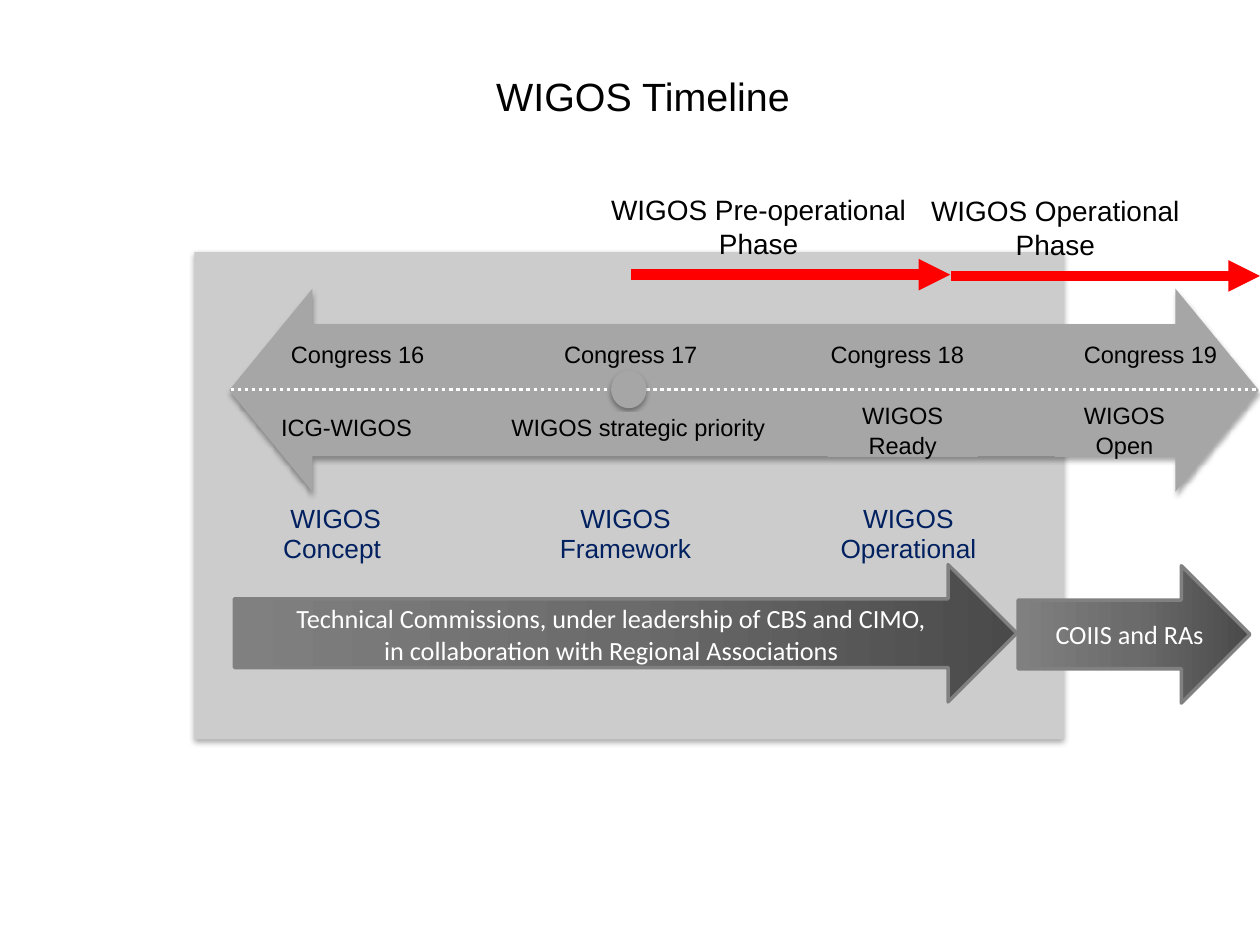
from copy import deepcopy
from dataclasses import dataclass

from lxml.etree import SubElement
from pptx import Presentation
from pptx.dml.color import RGBColor
from pptx.enum.dml import MSO_LINE as Dash
from pptx.enum.shapes import MSO_CONNECTOR as Conn, MSO_SHAPE as Kind
from pptx.enum.text import MSO_ANCHOR as Anchor, MSO_AUTO_SIZE as Fit, PP_ALIGN as Align
from pptx.oxml.ns import qn
from pptx.util import Pt


@dataclass
class Theme:
    panel: str = "CCCCCC"
    band: str = "A6A6A6"
    edge: str = "808080"
    ramp: tuple = ((0, "4A4A4A"), (0.5, "6B6B6B"), (1, "808080"))
    black: str = "000000"
    white: str = "FFFFFF"
    navy: str = "002060"
    red: str = "FF0000"
    font: str = "Arial"
    alt: str = "Calibri"
    head: float = 22.5
    phase: float = 16
    stage: float = 15
    mark: float = 13.5


class Board:
    def __init__(self, slide, theme):
        self.slide, self.theme = slide, theme

    def fill_text(self, frame, text, size, color, font=None, align=Align.CENTER,
                  space=None, gap=0, pads=(0, 0)):
        frame.text = text
        frame.margin_left = frame.margin_right = Pt(pads[0])
        frame.margin_top = frame.margin_bottom = Pt(pads[1])
        for i, par in enumerate(frame.paragraphs):
            par.alignment = align
            if space:
                par.line_spacing = space
            if i and gap:
                par.space_before = Pt(gap)
            for run in par.runs:
                run.font.name = font or self.theme.font
                run.font.size = Pt(size)
                run.font.color.rgb = RGBColor.from_string(color)

    def title(self, text, *box):
        item = self.slide.shapes.title
        item.left, item.top, item.width, item.height = map(Pt, box)
        frame = item.text_frame
        frame.auto_size = Fit.NONE
        frame.vertical_anchor = Anchor.MIDDLE
        self.fill_text(frame, text, self.theme.head, self.theme.black)

    def text(self, text, box, size, color, wrap=True, anchor=Anchor.TOP, **style):
        frame = self.slide.shapes.add_textbox(*map(Pt, box)).text_frame
        frame.word_wrap = wrap
        frame.auto_size = Fit.SHAPE_TO_FIT_TEXT
        frame.vertical_anchor = anchor
        self.fill_text(frame, text, size, color, **style)
        return frame

    def shape(self, kind, box, color, shade=False):
        item = self.slide.shapes.add_shape(kind, *map(Pt, box))
        item.shadow.inherit = False
        item.fill.solid()
        item.fill.fore_color.rgb = RGBColor.from_string(color)
        item.line.fill.background()
        if shade:
            self.shade(item)
        return item

    def shade(self, item):
        effects = item.element.spPr.find(qn("a:effectLst"))
        outer = SubElement(effects, qn("a:outerShdw"), blurRad=str(Pt(3)),
                           dist=str(Pt(1.8)), dir="5400000", rotWithShape="0")
        tone = SubElement(outer, qn("a:srgbClr"), val=self.theme.black)
        SubElement(tone, qn("a:alpha"), val="35000")

    def label(self, text, box, align=Align.CENTER):
        item = self.shape(Kind.RECTANGLE, box, self.theme.band)
        frame = item.text_frame
        frame.word_wrap = True
        frame.auto_size = Fit.SHAPE_TO_FIT_TEXT
        frame.vertical_anchor = Anchor.TOP
        self.fill_text(frame, text, self.theme.mark, self.theme.black,
                       align=align, space=Pt(17))

    def arrow(self, text, box, area):
        item = self.shape(Kind.RIGHT_ARROW, box, self.theme.edge)
        fill = item.fill
        fill.gradient()
        fill.gradient_angle = 180
        stops = item.element.spPr.find(".//" + qn("a:gsLst"))
        stops.append(deepcopy(stops[-1]))
        for stop, (spot, color) in zip(fill.gradient_stops, self.theme.ramp):
            stop.position = spot
            stop.color.rgb = RGBColor.from_string(color)
        item.line.color.rgb = RGBColor.from_string(self.theme.edge)
        item.line.width = Pt(2)
        SubElement(item.element.spPr.find(qn("a:ln")), qn("a:round"))
        self.text(text, area, self.theme.stage, self.theme.white,
                  anchor=Anchor.MIDDLE, font=self.theme.alt)

    def line(self, left, right, y, color, width, dash=None, tip=False):
        item = self.slide.shapes.add_connector(
            Conn.STRAIGHT, Pt(left), Pt(y), Pt(right), Pt(y))
        item.line.color.rgb = RGBColor.from_string(color)
        item.line.width = Pt(width)
        if dash:
            item.line.dash_style = dash
        props = item.element.spPr
        if tip:
            SubElement(props.find(qn("a:ln")), qn("a:tailEnd"), type="triangle")
        SubElement(props, qn("a:effectLst"))


def main():
    deck = Presentation()
    deck.slide_width, deck.slide_height = Pt(720), Pt(540)
    theme = Theme()
    board = Board(deck.slides.add_slide(deck.slide_layouts[5]), theme)

    # Title and background panel
    board.title("WIGOS Timeline", 110, 31, 515, 47)
    board.shape(Kind.RECTANGLE, (111, 144, 497, 278.5), theme.panel, shade=True)

    # Development stages
    for text, left, width in (("WIGOS\nConcept ", 134.6, 114.5),
                              ("WIGOS\nFramework", 300.2, 114.5),
                              ("WIGOS\nOperational", 457.2, 123.8)):
        board.text(text, (left, 290.2, width, 32.4), theme.stage, theme.navy,
                   space=0.8, gap=3)

    # Time band with its dotted axis
    band = board.shape(Kind.LEFT_RIGHT_ARROW, (131, 165, 588.3, 116),
                       theme.band, shade=True)
    band.adjustments[0], band.adjustments[1] = 0.65, 0.41
    board.line(131.8, 720, 222.5, theme.white, 2, dash=Dash.ROUND_DOT)

    # Congresses above the axis
    for num, left, width, align in ((16, 166.3, 91.4, Align.LEFT),
                                    (17, 315.4, 90, Align.CENTER),
                                    (18, 457.9, 92.9, Align.RIGHT),
                                    (19, 602.6, 92.9, Align.RIGHT)):
        board.label(f"Congress {num}", (left, 193.5, width, 16), align)
    board.shape(Kind.OVAL, (349.2, 211.7, 20.2, 21.6), theme.band, shade=True)

    # Outcomes below the axis
    for text, *box in (("ICG-WIGOS", 154.8, 235.4, 86.4, 16),
                       ("WIGOS strategic priority", 283.7, 235.4, 162, 16),
                       ("WIGOS Ready", 473, 228.2, 85.7, 33),
                       ("WIGOS Open", 602.6, 228.2, 79.9, 33)):
        board.label(text, box)

    # Responsible bodies
    board.arrow("Technical Commissions, under leadership of CBS and CIMO,\n"
                "in collaboration with Regional Associations",
                (133.9, 322.6, 447.1, 78.5), (133.9, 344.2, 430.6, 36))
    board.arrow("COIIS and RAs", (581.8, 323.3, 132.5, 78.5),
                (581.8, 353.5, 127.4, 18))

    # Phases with their red arrows
    for name, left, top, width, start, end in (
            ("Pre-operational", 346.3, 106.6, 180.7, 360.7, 543),
            ("Operational", 529.2, 107.3, 154.1, 543.6, 720)):
        frame = board.text(f"WIGOS {name}\nPhase", (left, top, width, 46),
                           theme.phase, theme.black, wrap=False, pads=(2.9, 3.6))
        frame.paragraphs[0].alignment = Align.LEFT
        board.line(start, end, top + 50.4, theme.red, 6, tip=True)

    deck.save("out.pptx")


if __name__ == "__main__":
    main()
